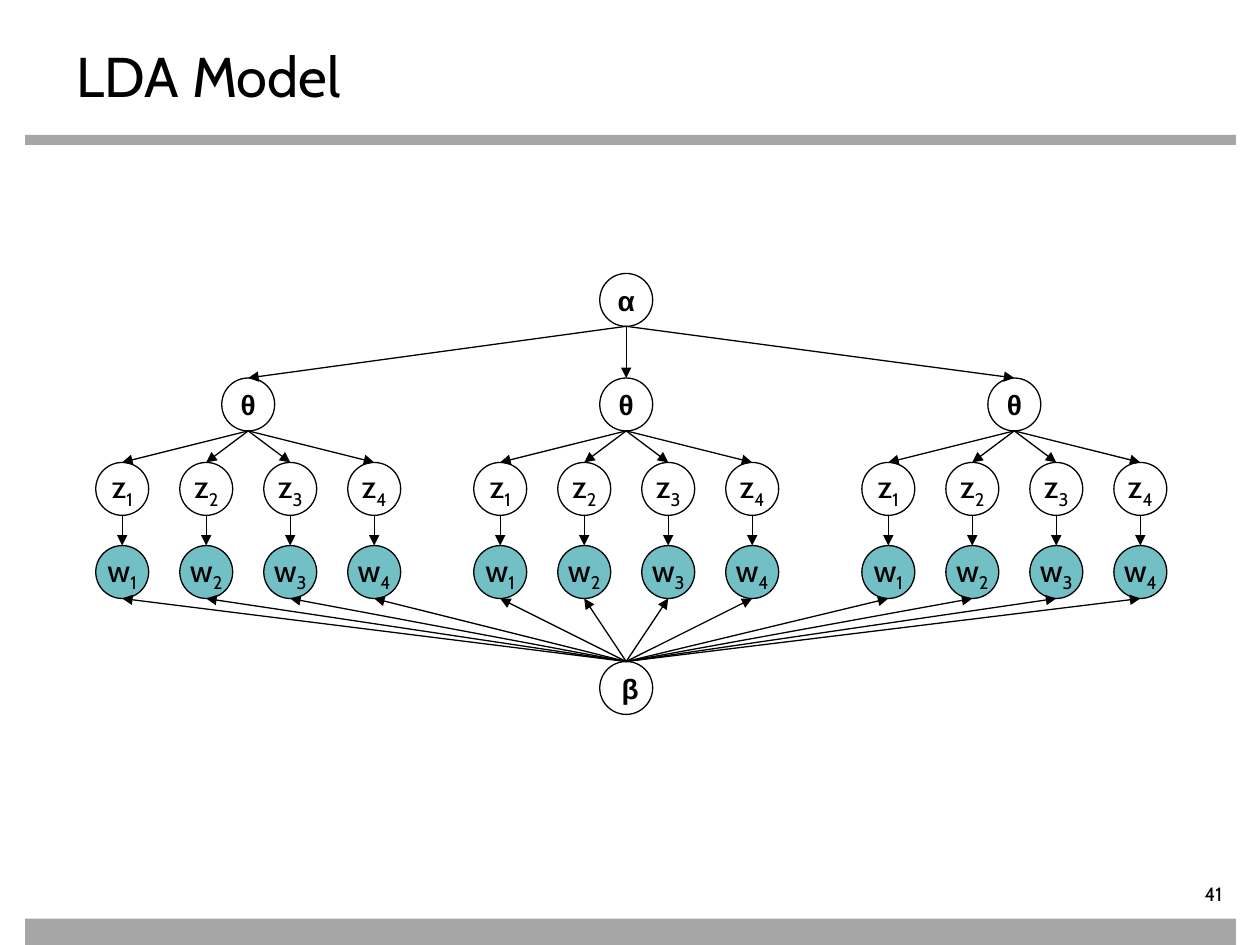
from lxml.etree import SubElement
from pptx import Presentation
from pptx.dml.color import RGBColor
from pptx.enum.shapes import MSO_CONNECTOR, MSO_SHAPE
from pptx.enum.text import MSO_ANCHOR, PP_ALIGN
from pptx.oxml.ns import qn
from pptx.util import Inches, Pt

COLORS = {"ink": "000000", "bar": "A6A6A6", "observed": "72BFC5"}


def write(tf, text, sub="", font="Cabin", size=18, bold=False, align=PP_ALIGN.CENTER):
    p = tf.paragraphs[0]
    p.alignment = align
    for part in filter(None, (text, sub)):
        r = p.add_run()
        r.text = part
        r.font.name, r.font.size, r.font.bold = font, Pt(size), bold
        r.font.color.rgb = RGBColor.from_string(COLORS["ink"])
    if sub:
        r.font._element.set("baseline", "-25000")


prs = Presentation()
prs.slide_width, prs.slide_height = Inches(10), Inches(7.5)
s = prs.slides.add_slide(prs.slide_layouts[5])

# Bars under the title and at the foot
for top, height in ((1.07, 0.08), (7.29, 0.21)):
    sp = s.shapes.add_shape(MSO_SHAPE.RECTANGLE, Inches(0.2), Inches(top), Inches(9.61), Inches(height))
    sp.shadow.inherit = False
    sp.fill.solid()
    sp.fill.fore_color.rgb = RGBColor.from_string(COLORS["bar"])
    sp.line.fill.background()

# Title
title = s.shapes.title
title.left, title.top, title.width, title.height = Inches(0.51), Inches(0.28), Inches(9), Inches(0.55)
title.text_frame.vertical_anchor = MSO_ANCHOR.TOP
write(title.text_frame, "LDA Model", size=32, align=PP_ALIGN.LEFT)

# Layout of the model: centre x of each column, centre y of each row
R = 0.21
MID_X = 4.97
ALPHA_Y, THETA_Y, Z_Y, W_Y, BETA_Y = 2.38, 3.21, 3.88, 4.54, 5.46
GREEK = {"font": "Arial", "size": 16, "bold": True}

nodes = [(MID_X, ALPHA_Y, "α", GREEK), (MID_X, BETA_Y, " β", GREEK)]
arrows = []
for doc_x in (1.97, MID_X, 8.05):
    nodes.append((doc_x, THETA_Y, "θ", GREEK))
    arrows.append((MID_X, ALPHA_Y + R, doc_x, THETA_Y - R))
    for i in range(4):
        x = doc_x - 1 + i * 2 / 3
        nodes += [(x, y, name, {"sub": str(i + 1)}) for y, name in ((Z_Y, "z"), (W_Y, "w"))]
        arrows += [
            (doc_x, THETA_Y + R, x, Z_Y - R),
            (x, Z_Y + R, x, W_Y - R),
            (MID_X, BETA_Y - R, x, W_Y + R),
        ]

# Nodes
for x, y, name, style in nodes:
    sp = s.shapes.add_shape(MSO_SHAPE.OVAL, Inches(x - R), Inches(y - R), Inches(2 * R), Inches(2 * R))
    sp.shadow.inherit = False
    if name == "w":
        sp.fill.solid()
        sp.fill.fore_color.rgb = RGBColor.from_string(COLORS["observed"])
    else:
        sp.fill.background()
    sp.line.color.rgb = RGBColor.from_string(COLORS["ink"])
    sp.line.width = Pt(0.75)
    tf = sp.text_frame
    tf.word_wrap = False
    tf.vertical_anchor = MSO_ANCHOR.MIDDLE
    write(tf, name, **style)

# Arrows
for ends in arrows:
    cx = s.shapes.add_connector(MSO_CONNECTOR.STRAIGHT, *map(Inches, ends))
    cx.line.color.rgb = RGBColor.from_string(COLORS["ink"])
    cx.line.width = Pt(0.75)
    SubElement(cx.line._get_or_add_ln(), qn("a:tailEnd"), type="triangle")
    SubElement(cx._element.spPr, qn("a:effectLst"))

# Page number
tf = s.shapes.add_textbox(Inches(8.7), Inches(7), Inches(1.1), Inches(0.22)).text_frame
tf.word_wrap = True
tf.margin_left = tf.margin_top = tf.margin_bottom = 0
write(tf, "41", size=11, align=PP_ALIGN.RIGHT)

prs.save("out.pptx")
